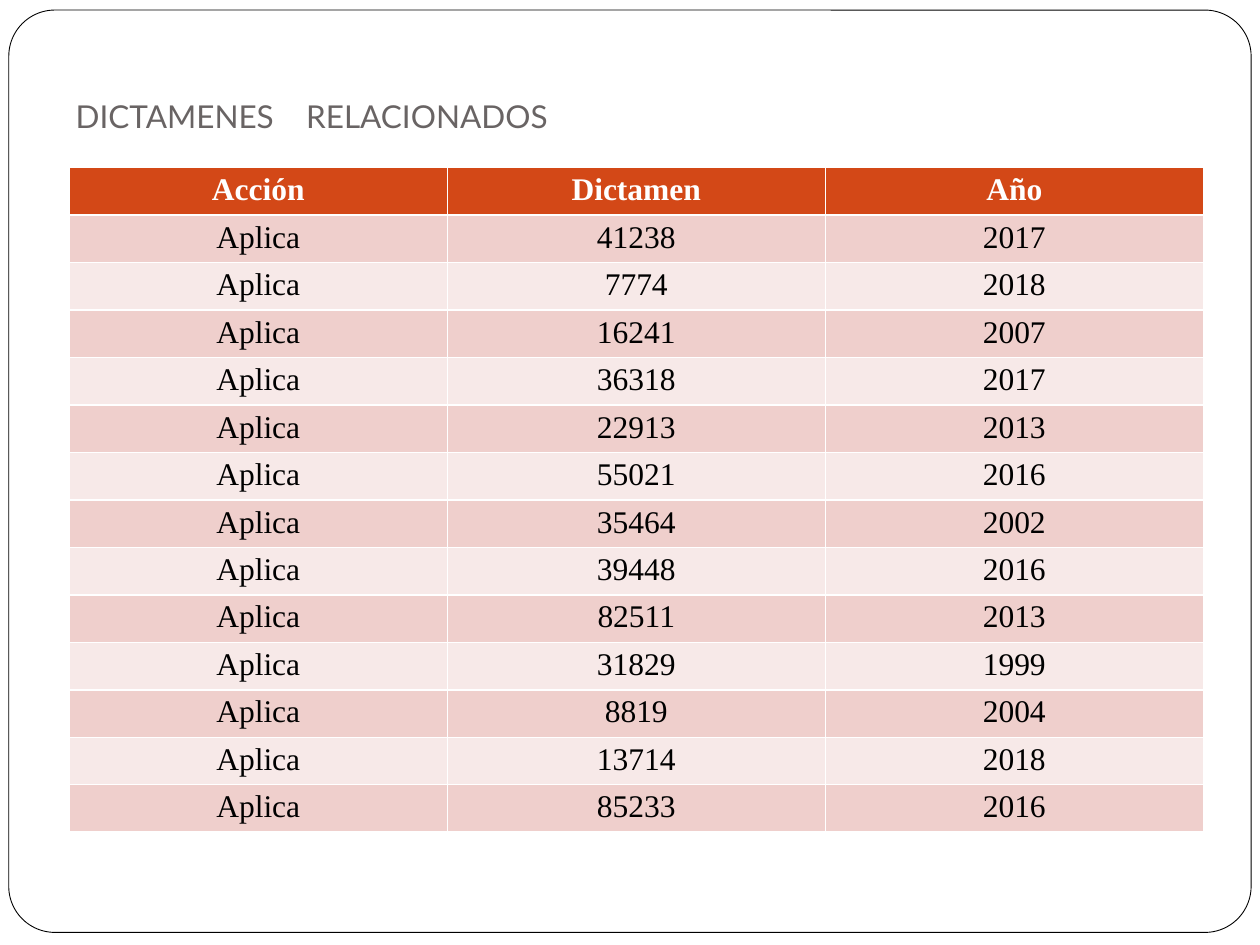
from lxml import etree
from pptx import Presentation
from pptx.dml.color import RGBColor
from pptx.enum.shapes import MSO_SHAPE
from pptx.enum.text import MSO_ANCHOR, PP_ALIGN
from pptx.oxml.ns import qn
from pptx.util import Inches, Pt

ROUND = MSO_SHAPE.ROUNDED_RECTANGLE
BOTTOM = MSO_ANCHOR.BOTTOM
LEFT, CENTER = PP_ALIGN.LEFT, PP_ALIGN.CENTER
WHITE, BLACK, GREY = "FFFFFF", "000000", "696464"
HEAD, BANDS = "D34817", ("EFCFCC", "F7E9E8")
TITLE = "DICTAMENES\tRELACIONADOS"
NAMES = ("Acción", "Dictamen", "Año")
CASES = (
    ("41238", "2017"), ("7774", "2018"), ("16241", "2007"),
    ("36318", "2017"), ("22913", "2013"), ("55021", "2016"),
    ("35464", "2002"), ("39448", "2016"), ("82511", "2013"),
    ("31829", "1999"), ("8819", "2004"), ("13714", "2018"),
    ("85233", "2016"),
)


def paint(color, value):
    """Set a colour format from a hex string."""
    color.rgb = RGBColor.from_string(value)


def fill(item, value):
    """Give a shape or cell a solid fill."""
    item.fill.solid()
    paint(item.fill.fore_color, value)


def write(frame, text, font="Times New Roman", size=18, color=BLACK,
          bold=False, align=CENTER):
    """Write one formatted paragraph and return it."""
    para = frame.paragraphs[0]
    para.alignment = align
    run = para.add_run()
    run.text = text
    run.font.name = font
    run.font.size = Pt(size)
    run.font.bold = bold
    paint(run.font.color, color)
    return para


def add_tab(para, pos):
    """Add a left tab stop to a paragraph."""
    tabs = etree.SubElement(para._p.get_or_add_pPr(), qn("a:tabLst"))
    etree.SubElement(tabs, qn("a:tab"), pos=str(pos), algn="l")


def add_title(slide):
    """Place and format the slide title."""
    title = slide.shapes.title
    title.left, title.top = Inches(0.5), Inches(0.3)
    title.width, title.height = Inches(9), Inches(0.87)
    frame = title.text_frame
    frame.vertical_anchor = BOTTOM
    frame.margin_bottom = Inches(0.1)
    para = write(frame, TITLE, font="Lato", color=GREY, align=LEFT)
    add_tab(para, Inches(1.83))


def add_frame(slide):
    """Draw the rounded page frame behind the title."""
    frame = slide.shapes.add_shape(
        ROUND, Inches(0.07), Inches(0.08), Inches(9.86), Inches(7.32))
    frame.adjustments[0] = 0.05
    frame.shadow.inherit = False
    fill(frame, WHITE)
    paint(frame.line.color, BLACK)
    frame.line.width = Pt(0.5)
    slide.shapes.title._element.addprevious(frame._element)


def add_grid(slide):
    """Add the table of rulings with banded rows."""
    rows = [NAMES] + [("Aplica", *case) for case in CASES]
    table = slide.shapes.add_table(
        len(rows), len(NAMES), Inches(0.55), Inches(1.33),
        Inches(9), Inches(5.28)).table
    for i, row in enumerate(rows):
        for j, text in enumerate(row):
            cell = table.cell(i, j)
            cell.margin_top = cell.margin_bottom = Inches(0.04)
            fill(cell, BANDS[(i - 1) % 2] if i else HEAD)
            write(cell.text_frame, text, bold=i == 0,
                  color=BLACK if i else WHITE)


def main():
    """Build and save the slide."""
    deck = Presentation()
    deck.slide_width, deck.slide_height = Inches(10), Inches(7.5)
    slide = deck.slides.add_slide(deck.slide_layouts[5])
    add_title(slide)
    add_frame(slide)
    add_grid(slide)
    deck.save("out.pptx")


if __name__ == "__main__":
    main()
